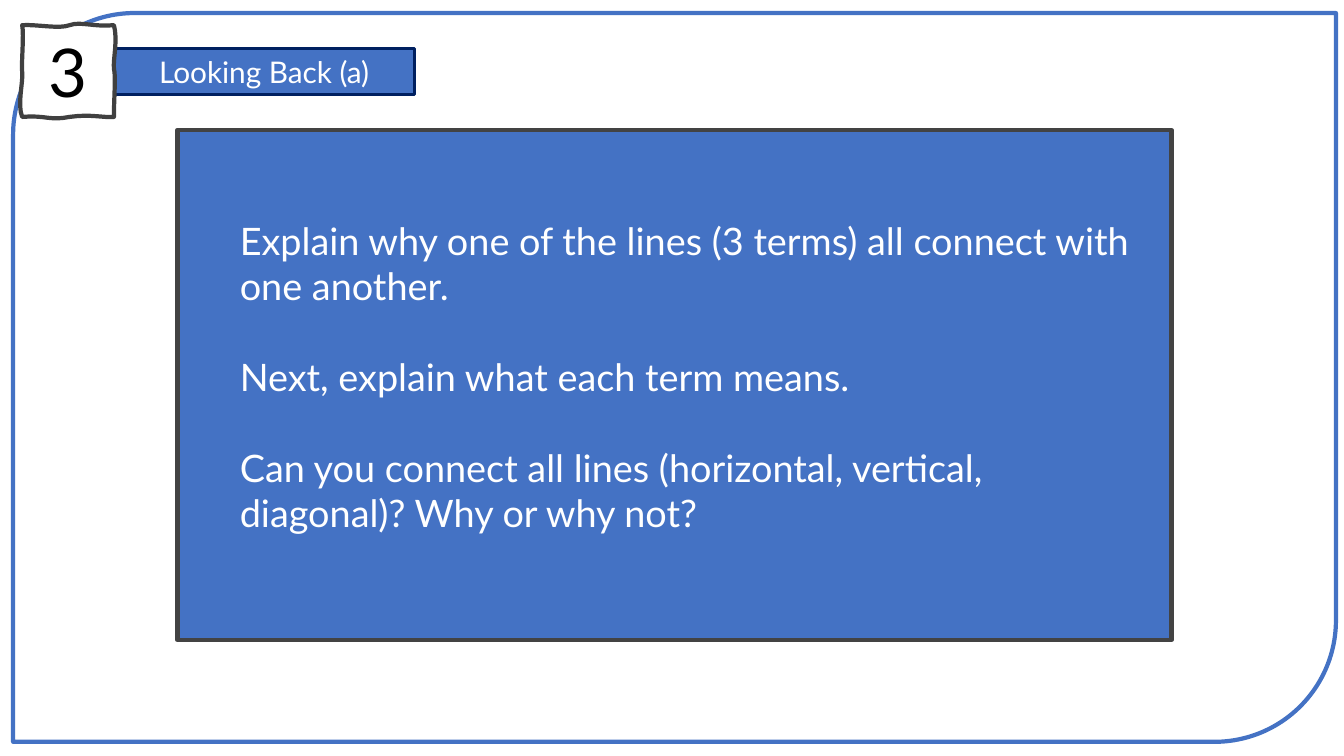
"""Build the "Looking Back (a)" question slide."""
from dataclasses import dataclass
from typing import Any, Optional

from pptx import Presentation
from pptx.dml.color import RGBColor
from pptx.enum.shapes import MSO_SHAPE
from pptx.enum.text import MSO_ANCHOR, PP_ALIGN
from pptx.shapes.autoshape import Shape
from pptx.slide import Slide
from pptx.util import Emu, Pt

RECTANGLE = MSO_SHAPE.RECTANGLE
DIAGONAL_FRAME = MSO_SHAPE.ROUND_2_DIAG_RECTANGLE
CENTER, LEFT = PP_ALIGN.CENTER, PP_ALIGN.LEFT
MIDDLE, TOP = MSO_ANCHOR.MIDDLE, MSO_ANCHOR.TOP

EMU_PER_PX = 9144
SLIDE_SIZE = (1333, 750)
CURVE_STEPS = 8

Point = tuple[float, float]
Curve = tuple[Point, Point, Point]


@dataclass(frozen=True)
class Theme:
    """Colours, font and type sizes of the slide."""
    blue: str = "4472C4"
    navy: str = "002060"
    charcoal: str = "434343"
    sketch: str = "404040"
    white: str = "FFFFFF"
    black: str = "000000"
    font: str = "Lato"
    title_size: float = 21.3
    body_size: float = 27
    number_size: float = 48
    body_gap: float = 32.4


THEME = Theme()


@dataclass(frozen=True)
class Look:
    """Fill and outline of a shape; None leaves either out."""
    fill: Optional[str] = None
    line: Optional[str] = None
    width: float = 0


@dataclass(frozen=True)
class Label:
    """Paragraphs with their type and placement."""
    paragraphs: tuple[str, ...]
    size: float
    color: str
    align: PP_ALIGN = CENTER
    anchor: MSO_ANCHOR = MIDDLE
    gap: float = 0


@dataclass(frozen=True)
class Box:
    """A preset shape with its place in px."""
    left: int
    top: int
    width: int
    height: int
    look: Look
    label: Optional[Label] = None
    kind: MSO_SHAPE = RECTANGLE


QUESTIONS = (
    "Explain why one of the lines (3 terms) all connect with one another.",
    "Next, explain what each term means.",
    "Can you connect all lines (horizontal, vertical, diagonal)? Why or why not?",
)

FRAME = Box(13, 13, 1312, 723, Look(line=THEME.blue, width=3), kind=DIAGONAL_FRAME)
TITLE = Box(113, 48, 298, 46, Look(THEME.blue, THEME.navy, 2.25),
            Label(("Looking Back (a)",), THEME.title_size, THEME.white))
PANEL = Box(176, 129, 986, 506, Look(THEME.blue, THEME.charcoal, 3))
QUESTION_BOX = Box(228, 211, 929, 328, Look(THEME.blue),
                   Label(QUESTIONS, THEME.body_size, THEME.white, LEFT, TOP, THEME.body_gap))

BADGE_START: Point = (22, 25)
BADGE_CURVES: tuple[Curve, ...] = (
    ((36, 24), (59, 29), (69, 25)),
    ((80, 21), (93, 27), (113, 25)),
    ((117, 40), (112, 59), (113, 68)),
    ((115, 77), (113, 95), (113, 116)),
    ((103, 117), (90, 113), (69, 116)),
    ((49, 120), (45, 114), (22, 116)),
    ((17, 104), (23, 82), (22, 72)),
    ((21, 62), (24, 35), (22, 25)),
)
BADGE_LOOK = Look(THEME.white, THEME.sketch, 3)
BADGE_LABEL = Label(("3",), THEME.number_size, THEME.black)


def px(length: float) -> Emu:
    """Turn px into EMU."""
    return Emu(round(length * EMU_PER_PX))


def apply_values(target: Any, values: dict[str, Any]) -> None:
    """Set each named attribute on the target."""
    for name, value in values.items():
        setattr(target, name, value)


def paint(shape: Shape, look: Look) -> None:
    """Give a shape its fill and outline without a shadow."""
    shape.shadow.inherit = False
    for fill, color in ((shape.fill, look.fill), (shape.line.fill, look.line)):
        if color is None:
            fill.background()
        else:
            fill.solid()
            fill.fore_color.rgb = RGBColor.from_string(color)
    if look.line:
        shape.line.width = Pt(look.width)


def write(shape: Shape, label: Label) -> None:
    """Write the label's paragraphs into a shape."""
    frame = shape.text_frame
    apply_values(frame, {"word_wrap": True, "vertical_anchor": label.anchor})
    for index, text in enumerate(label.paragraphs):
        paragraph = frame.add_paragraph() if index else frame.paragraphs[0]
        apply_values(paragraph, {"alignment": label.align,
                                 "space_before": Pt(label.gap if index else 0)})
        run = paragraph.add_run()
        run.text = text
        apply_values(run.font, {"name": THEME.font, "size": Pt(label.size)})
        run.font.color.rgb = RGBColor.from_string(label.color)


def draw_box(slide: Slide, box: Box) -> None:
    """Draw a preset shape with its label."""
    shape = slide.shapes.add_shape(box.kind, px(box.left), px(box.top),
                                   px(box.width), px(box.height))
    paint(shape, box.look)
    if box.label:
        write(shape, box.label)


def curve_points(start: Point, curve: Curve) -> list[Point]:
    """Sample a cubic curve in EMU, leaving out its start."""
    points = []
    for step in range(1, CURVE_STEPS + 1):
        t = step / CURVE_STEPS
        weights = ((1 - t) ** 3, 3 * t * (1 - t) ** 2, 3 * t * t * (1 - t), t ** 3)
        x, y = (sum(weight * point[axis] for weight, point in zip(weights, (start, *curve)))
                for axis in (0, 1))
        points.append((px(x), px(y)))
    return points


def draw_badge(slide: Slide) -> None:
    """Draw the wavy number badge."""
    start = BADGE_START
    builder = slide.shapes.build_freeform(px(start[0]), px(start[1]))
    for index, curve in enumerate(BADGE_CURVES):
        builder.add_line_segments(curve_points(start, curve),
                                  close=index == len(BADGE_CURVES) - 1)
        start = curve[-1]
    badge = builder.convert_to_shape()
    paint(badge, BADGE_LOOK)
    write(badge, BADGE_LABEL)


def main() -> None:
    """Build and save the slide."""
    presentation = Presentation()
    width, height = SLIDE_SIZE
    apply_values(presentation, {"slide_width": px(width), "slide_height": px(height)})
    slide = presentation.slides.add_slide(presentation.slide_layouts[6])
    for box in (FRAME, TITLE):
        draw_box(slide, box)
    draw_badge(slide)
    for box in (PANEL, QUESTION_BOX):
        draw_box(slide, box)
    presentation.save("out.pptx")


if __name__ == "__main__":
    main()
